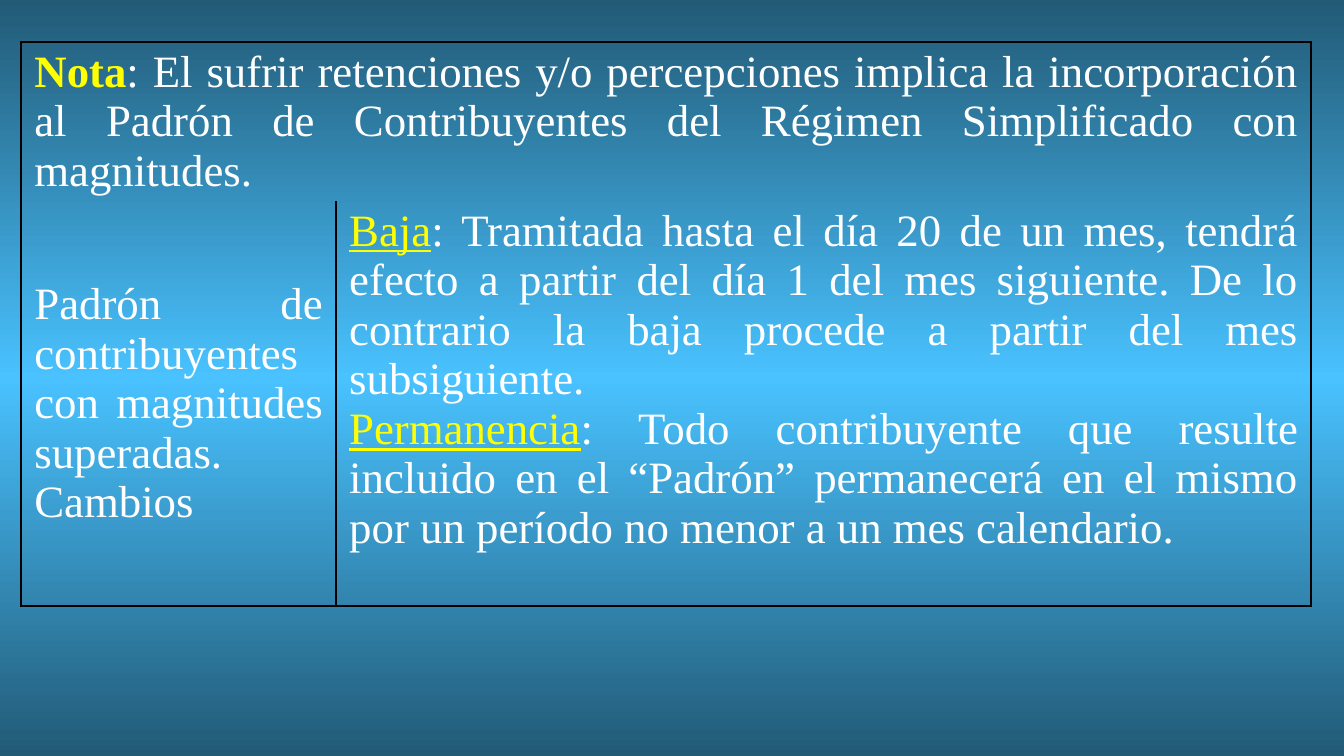
import copy

import pptx
import pptx.dml.color
import pptx.enum.text
import pptx.oxml.ns
import pptx.util
from lxml import etree
from pptx.util import Cm

WHITE, YELLOW, BLACK = "FFFFFF", "FFFF00", "000000"
DARK_BLUE, LIGHT_BLUE = "225A76", "49C2FF"
MIDDLE = pptx.enum.text.MSO_ANCHOR.MIDDLE
TOP = pptx.enum.text.MSO_ANCHOR.TOP


def color(hex_string):
    return pptx.dml.color.RGBColor.from_string(hex_string)


class SlideBuilder:
    font_name = "Times New Roman"
    font_size = pptx.util.Pt(24)
    border_width = pptx.util.Pt(1)

    def __init__(self, slide):
        self.slide = slide

    def background(self, edge, center):
        """Fill the slide with a vertical gradient, edge to center to edge."""
        fill = self.slide.background.fill
        fill.gradient()
        fill.gradient_angle = 90
        stop_list = fill._fill._gradFill.gsLst
        stop_list.append(copy.deepcopy(stop_list[-1]))
        for stop, position, shade in zip(fill.gradient_stops, (0, 0.5, 1), (edge, center, edge)):
            stop.position = position
            stop.color.rgb = color(shade)

    def table(self, left, top, widths, heights):
        frame = self.slide.shapes.add_table(
            len(heights), len(widths), left, top, sum(widths), sum(heights))
        table = frame.table
        table.first_row = table.horz_banding = False
        for column, width in zip(table.columns, widths):
            column.width = width
        for row, height in zip(table.rows, heights):
            row.height = height
        return table

    def borders(self, cell, sides):
        """Draw the named sides (from L, R, T, B) and clear the others."""
        properties = cell._tc.get_or_add_tcPr()
        for side in "LRTB":
            line = etree.SubElement(properties, pptx.oxml.ns.qn(f"a:ln{side}"),
                                    w=str(self.border_width))
            if side in sides:
                fill = etree.SubElement(line, pptx.oxml.ns.qn("a:solidFill"))
                etree.SubElement(fill, pptx.oxml.ns.qn("a:srgbClr"), val=BLACK)
            else:
                etree.SubElement(line, pptx.oxml.ns.qn("a:noFill"))
        cell.fill.background()

    def cell_text(self, cell, paragraphs, anchor=MIDDLE):
        """Write paragraphs, each a list of (text, colour, font options)."""
        cell.vertical_anchor = anchor
        cell.margin_left = cell.margin_right = Cm(0.25)
        cell.margin_top = cell.margin_bottom = Cm(0.1)
        frame = cell.text_frame
        for index, runs in enumerate(paragraphs):
            paragraph = frame.add_paragraph() if index else frame.paragraphs[0]
            paragraph.alignment = pptx.enum.text.PP_ALIGN.JUSTIFY
            for text, shade, options in runs:
                run = paragraph.add_run()
                run.text = text
                run.font.name = self.font_name
                run.font.size = self.font_size
                run.font.color.rgb = color(shade)
                for option, value in options.items():
                    setattr(run.font, option, value)


def main():
    presentation = pptx.Presentation()
    presentation.slide_width, presentation.slide_height = Cm(25.4), Cm(14.29)
    slide = presentation.slides.add_slide(presentation.slide_layouts[6])
    builder = SlideBuilder(slide)
    builder.background(DARK_BLUE, LIGHT_BLUE)

    table = builder.table(Cm(0.4), Cm(0.79), [Cm(5.95), Cm(18.43)], [Cm(3.01), Cm(7.66)])
    note, note_end = table.cell(0, 0), table.cell(0, 1)
    register, changes = table.cell(1, 0), table.cell(1, 1)
    note.merge(note_end)
    for cell, sides in ((note, "LRT"), (note_end, "RT"), (register, "LRB"), (changes, "LRB")):
        builder.borders(cell, sides)

    underlined = {"underline": True}
    builder.cell_text(note, [[
        ("Nota", YELLOW, {"bold": True}),
        (": El sufrir retenciones y/o percepciones implica la incorporación al Padrón de "
         "Contribuyentes del Régimen Simplificado con magnitudes.", WHITE, {}),
    ]])
    builder.cell_text(register, [[
        ("Padrón de contribuyentes con magnitudes superadas. Cambios", WHITE, {}),
    ]])
    builder.cell_text(changes, [
        [("Baja", YELLOW, underlined),
         (": Tramitada hasta el día 20 de un mes, tendrá efecto a partir del día 1 del mes "
          "siguiente. De lo contrario la baja procede a partir del mes subsiguiente.", WHITE, {})],
        [("Permanencia", YELLOW, underlined),
         (": Todo contribuyente que resulte incluido en el “Padrón” permanecerá en el mismo "
          "por un período no menor a un mes calendario.", WHITE, {})],
    ], anchor=TOP)
    presentation.save("out.pptx")


if __name__ == "__main__":
    main()
